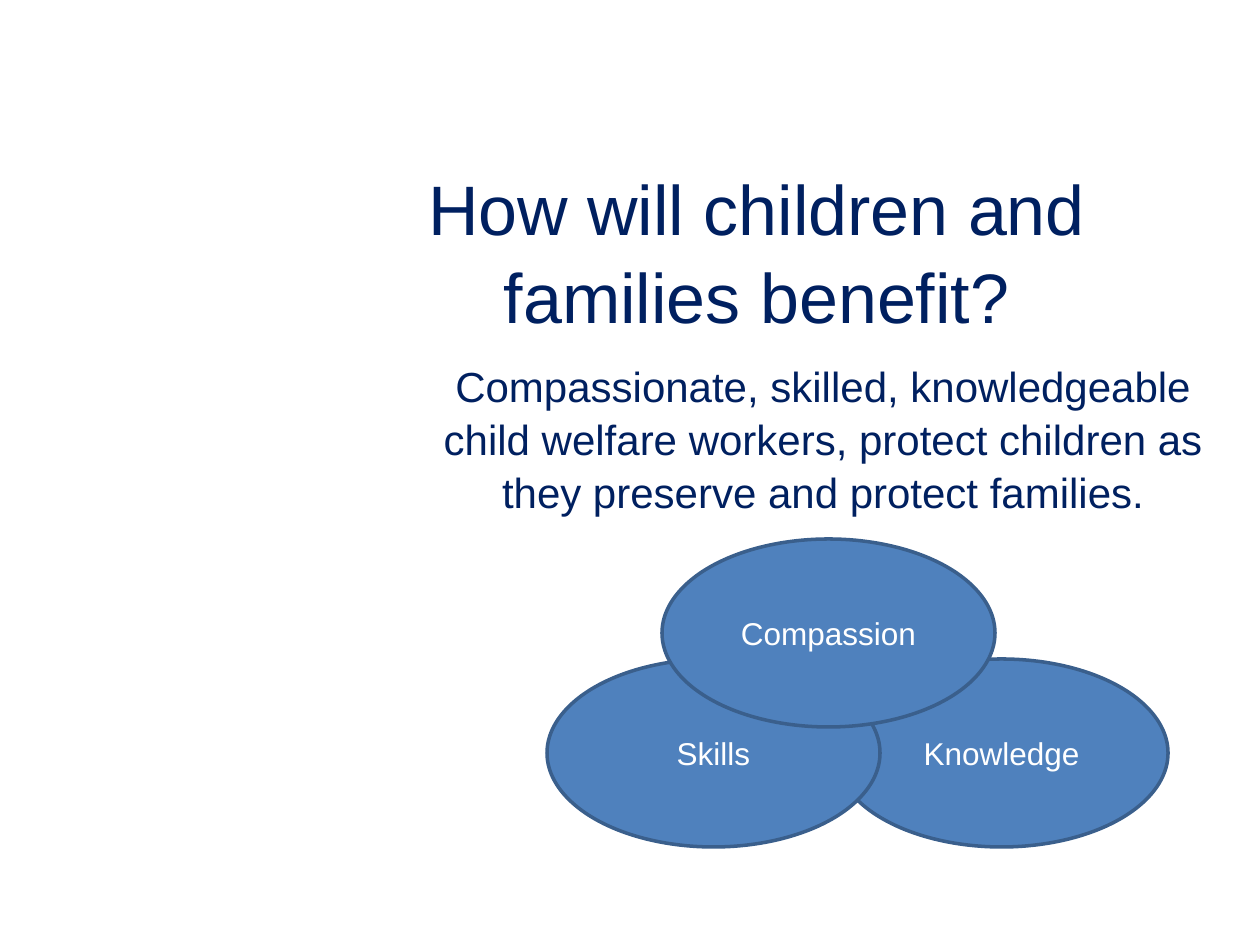
from dataclasses import dataclass

from pptx import Presentation, util as u
from pptx.dml.color import RGBColor
from pptx.enum import shapes, text

PX_PER_INCH = 126


@dataclass(frozen=True)
class Theme:
    font: str = "Arial"
    heading: str = "002060"
    oval_fill: str = "4F81BD"
    oval_line: str = "3A5F8C"
    oval_text: str = "FFFFFF"
    title_size: int = 40
    statement_size: int = 24
    label_size: int = 18
    line_spacing: float = 1.05


THEME = Theme()


def px(length):
    return u.Emu(round(length * u.Inches(1) / PX_PER_INCH))


def rgb(value):
    return RGBColor.from_string(value)


def write(frame, wording, size, color, anchor, spacing=1.0):
    """Fill a text frame with one centred paragraph."""
    frame.word_wrap = True
    frame.auto_size = text.MSO_AUTO_SIZE.NONE
    frame.vertical_anchor = anchor
    paragraph = frame.paragraphs[0]
    paragraph.alignment = text.PP_ALIGN.CENTER
    paragraph.line_spacing = spacing
    run = paragraph.add_run()
    run.text = wording
    run.font.name = THEME.font
    run.font.size = u.Pt(size)
    run.font.color.rgb = rgb(color)


def place_title(slide, box, wording):
    title = slide.shapes.title
    title.left, title.top, title.width, title.height = map(px, box)
    write(title.text_frame, wording, THEME.title_size, THEME.heading,
          text.MSO_ANCHOR.MIDDLE, THEME.line_spacing)


def add_statement(slide, box, wording):
    statement = slide.shapes.add_textbox(*map(px, box))
    write(statement.text_frame, wording, THEME.statement_size, THEME.heading,
          text.MSO_ANCHOR.TOP, THEME.line_spacing)


def add_qualities(slide, box):
    """Overlap three ovals: two along the bottom of the box, one on top."""
    left, top, width, height = box
    oval_width, oval_height = 333, 188
    base = top + height - oval_height
    qualities = [
        ("Knowledge", left + width - oval_width, base),
        ("Skills", left, base),
        ("Compassion", left + 115, top),
    ]
    for quality, x, y in qualities:
        oval = slide.shapes.add_shape(
            shapes.MSO_SHAPE.OVAL, *map(px, (x, y, oval_width, oval_height)))
        oval.shadow.inherit = False
        oval.fill.solid()
        oval.fill.fore_color.rgb = rgb(THEME.oval_fill)
        oval.line.color.rgb = rgb(THEME.oval_line)
        oval.line.width = u.Pt(2)
        write(oval.text_frame, quality, THEME.label_size, THEME.oval_text,
              text.MSO_ANCHOR.MIDDLE)


def main():
    deck = Presentation()
    deck.slide_width, deck.slide_height = px(1260), px(945)
    slide = deck.slides.add_slide(deck.slide_layouts.get_by_name("Title Only"))
    place_title(slide, (299, 155, 915, 188),
                "How will children and families benefit?")
    add_statement(slide, (401, 352, 844, 188),
                  "Compassionate, skilled, knowledgeable child welfare workers, "
                  "protect children as they preserve and protect families.")
    add_qualities(slide, (547, 539, 621, 308))
    deck.save("out.pptx")


if __name__ == "__main__":
    main()
